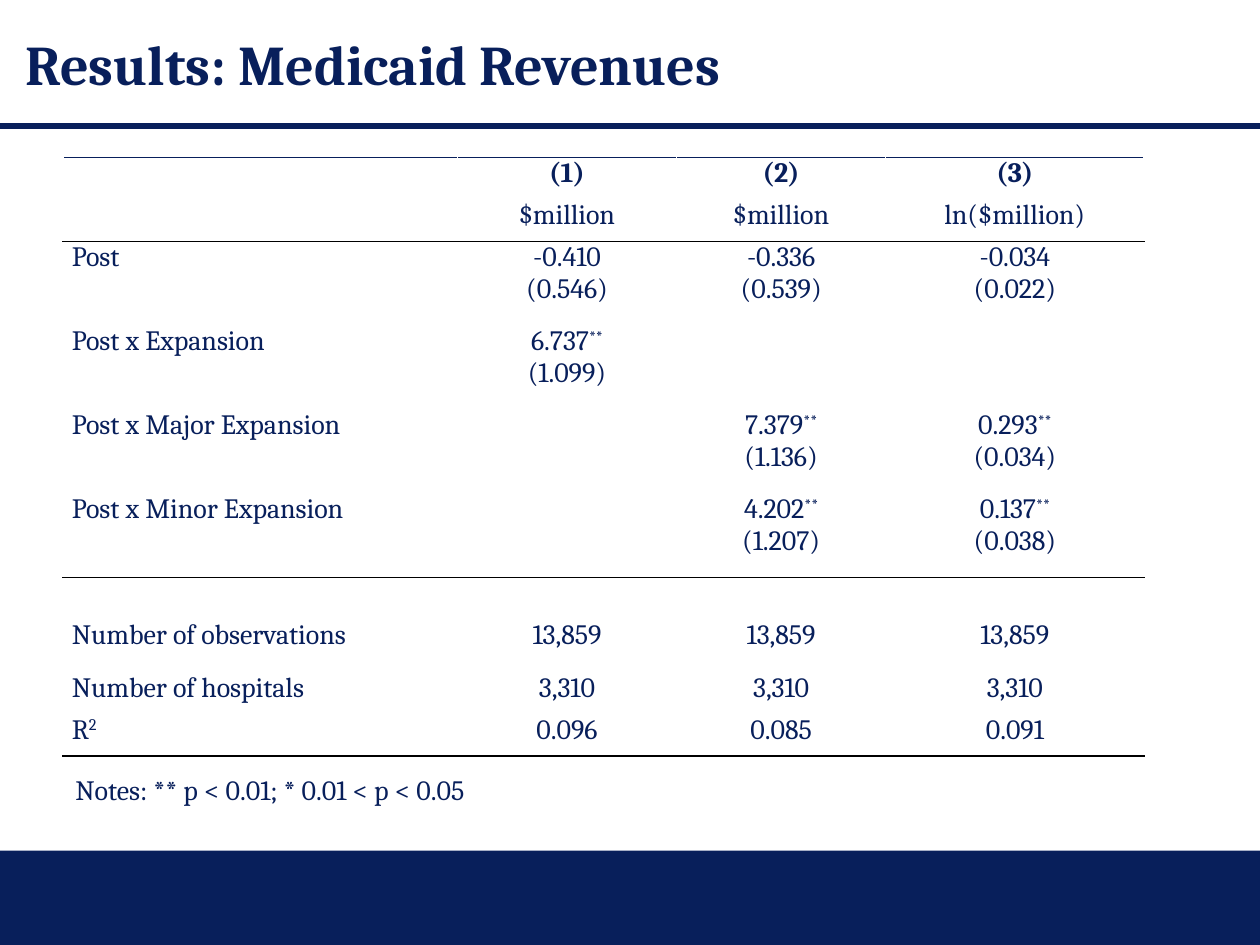
from dataclasses import dataclass

from lxml import etree
from pptx import Presentation
from pptx.dml.color import RGBColor
from pptx.enum import shapes, text
from pptx.oxml import ns
from pptx.util import Inches, Pt


@dataclass(frozen=True)
class Theme:
    navy: str = "081F5B"
    black: str = "000000"
    white: str = "FFFFFF"
    font: str = "Cambria"
    title_size: int = 32
    body_size: int = 16


def color(value):
    return RGBColor.from_string(value)


def add_text(frame, content, *, font, size, ink, bold=False, align=text.PP_ALIGN.LEFT):
    for index, line in enumerate(content.split("\n")):
        paragraph = frame.paragraphs[0] if index == 0 else frame.add_paragraph()
        paragraph.alignment = align
        for position, part in enumerate(line.split("^")):
            run = paragraph.add_run()
            run.text = part
            run.font.name = font
            run.font.size = Pt(size)
            run.font.bold = bold
            run.font.color.rgb = color(ink)
            if position:
                run.font._element.set("baseline", "30000")


class SlideBuilder:
    def __init__(self, slide, theme):
        self.slide = slide
        self.theme = theme

    def styled_text(self, frame, content, **kwargs):
        style = {"font": self.theme.font, "size": self.theme.body_size, "ink": self.theme.navy}
        add_text(frame, content, **{**style, **kwargs})

    def band(self, left, top, width, height):
        band = self.slide.shapes.add_shape(
            shapes.MSO_SHAPE.RECTANGLE, Inches(left), Inches(top), Inches(width), Inches(height))
        band.shadow.inherit = False
        band.fill.solid()
        band.fill.fore_color.rgb = color(self.theme.navy)
        band.line.fill.background()

    def rule(self, left, top, right, weight):
        rule = self.slide.shapes.add_connector(
            shapes.MSO_CONNECTOR.STRAIGHT, Inches(left), Inches(top), Inches(right), Inches(top))
        rule.line.color.rgb = color(self.theme.navy)
        rule.line.width = Pt(weight)
        etree.SubElement(rule._element.spPr, ns.qn("a:effectLst"))

    def title(self, content, left, top, width, height):
        title = self.slide.shapes.title
        title.left, title.top = Inches(left), Inches(top)
        title.width, title.height = Inches(width), Inches(height)
        title.text_frame.vertical_anchor = text.MSO_ANCHOR.MIDDLE
        self.styled_text(title.text_frame, content, size=self.theme.title_size, bold=True)

    def note(self, content, left, top, width, height):
        note = self.slide.shapes.add_textbox(
            Inches(left), Inches(top), Inches(width), Inches(height))
        note.text_frame.word_wrap = True
        note.text_frame.auto_size = text.MSO_AUTO_SIZE.SHAPE_TO_FIT_TEXT
        self.styled_text(note.text_frame, content)

    def border(self, cell, side, ink, weight):
        line = etree.SubElement(
            cell._tc.get_or_add_tcPr(), ns.qn(f"a:ln{side}"), w=str(Pt(weight)))
        fill = etree.SubElement(line, ns.qn("a:solidFill"))
        etree.SubElement(fill, ns.qn("a:srgbClr"), val=ink)

    def table(self, rows, left, top, widths, heights, rules):
        frame = self.slide.shapes.add_table(
            len(rows), len(widths), Inches(left), Inches(top),
            Inches(sum(widths)), Inches(sum(heights)))
        table = frame.table
        table.first_row = False
        table.horz_banding = False
        for column, width in zip(table.columns, widths):
            column.width = Inches(width)
        for r, (values, height) in enumerate(zip(rows, heights)):
            table.rows[r].height = Inches(height)
            for c, value in enumerate(values):
                cell = table.cell(r, c)
                cell.margin_left = cell.margin_right = Inches(0.07)
                cell.margin_top = cell.margin_bottom = 0
                for side, edge in (("T", r), ("B", r + 1)):
                    if edge in rules:
                        self.border(cell, side, *rules[edge])
                cell.fill.solid()
                cell.fill.fore_color.rgb = color(self.theme.white)
                if value:
                    align = text.PP_ALIGN.CENTER if c else text.PP_ALIGN.LEFT
                    self.styled_text(cell.text_frame, value, bold=r == 0, align=align)


def main():
    theme = Theme()
    deck = Presentation()
    deck.slide_width, deck.slide_height = Inches(10), Inches(7.5)
    results = SlideBuilder(deck.slides.add_slide(deck.slide_layouts[5]), theme)

    results.band(0, 6.75, 10, 0.75)
    results.rule(0, 1, 10, 3)
    results.title("Results: Medicaid Revenues", 0.1, 0, 9.75, 1)

    estimates = [
        ("", "(1)", "(2)", "(3)"),
        ("", "$million", "$million", "ln($million)"),
        ("Post", "-0.410\n(0.546)", "-0.336\n(0.539)", "-0.034\n(0.022)"),
        ("Post x Expansion", "6.737^**\n(1.099)", "", ""),
        ("Post x Major Expansion", "", "7.379^**\n(1.136)", "0.293^**\n(0.034)"),
        ("Post x Minor Expansion", "", "4.202^**\n(1.207)", "0.137^**\n(0.038)"),
        ("",) * 4,
        ("Number of observations",) + ("13,859",) * 3,
        ("Number of hospitals",) + ("3,310",) * 3,
        ("R^2", "0.096", "0.085", "0.091"),
    ]
    single, double = 1 / 3, 2 / 3
    heights = [single] * 2 + [double] * 4 + [single, 0.42] + [single] * 2
    rules = {
        0: (theme.navy, 1),
        2: (theme.black, 1),
        6: (theme.black, 1),
        len(estimates): (theme.black, 1.5),
    }
    results.table(estimates, 0.5, 1.25, [3.13, 1.74, 1.66, 2.05], heights, rules)
    results.note("Notes: ** p < 0.01; * 0.01 < p < 0.05", 0.5, 6.08, 5.58, 0.91)

    deck.save("out.pptx")


if __name__ == "__main__":
    main()
